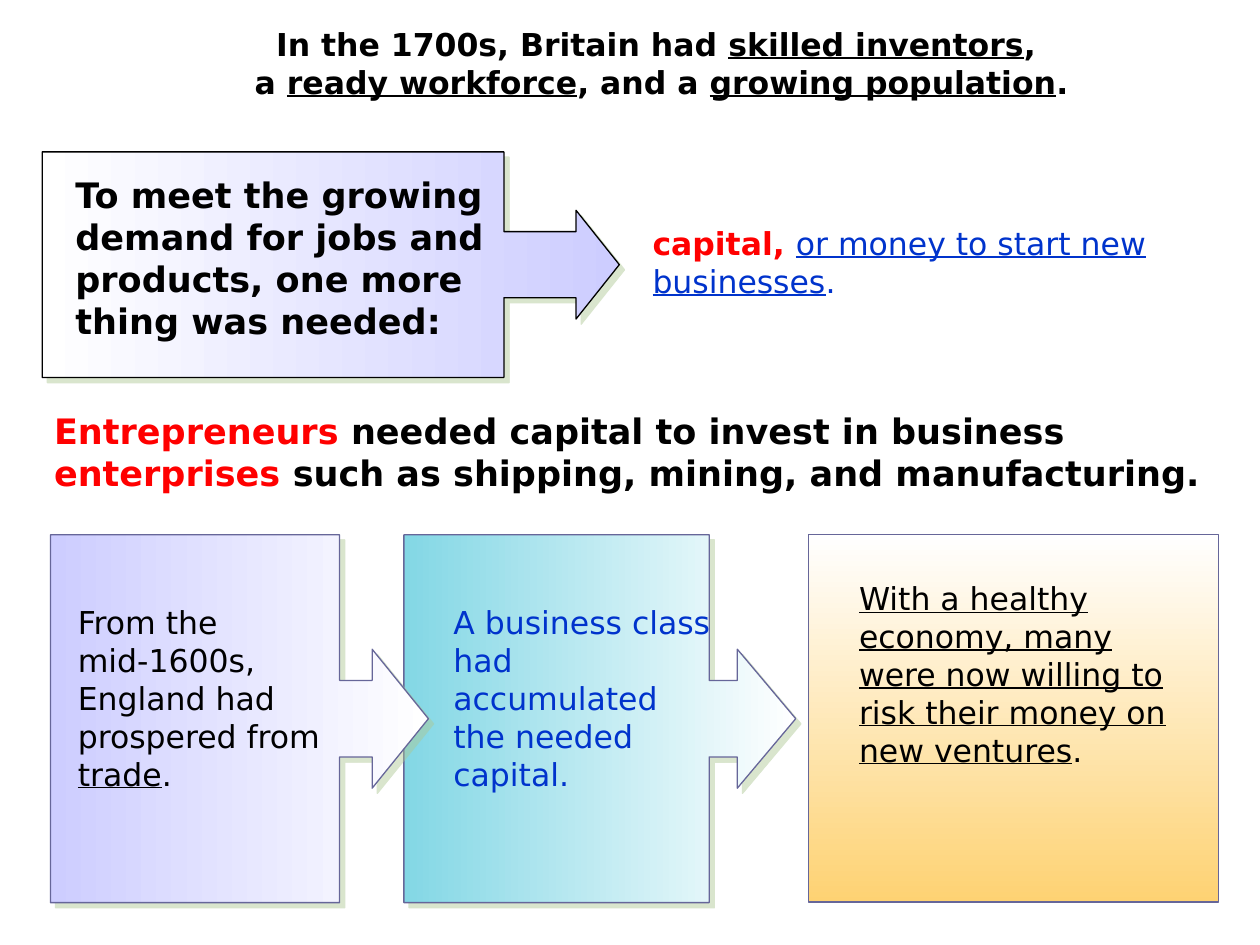
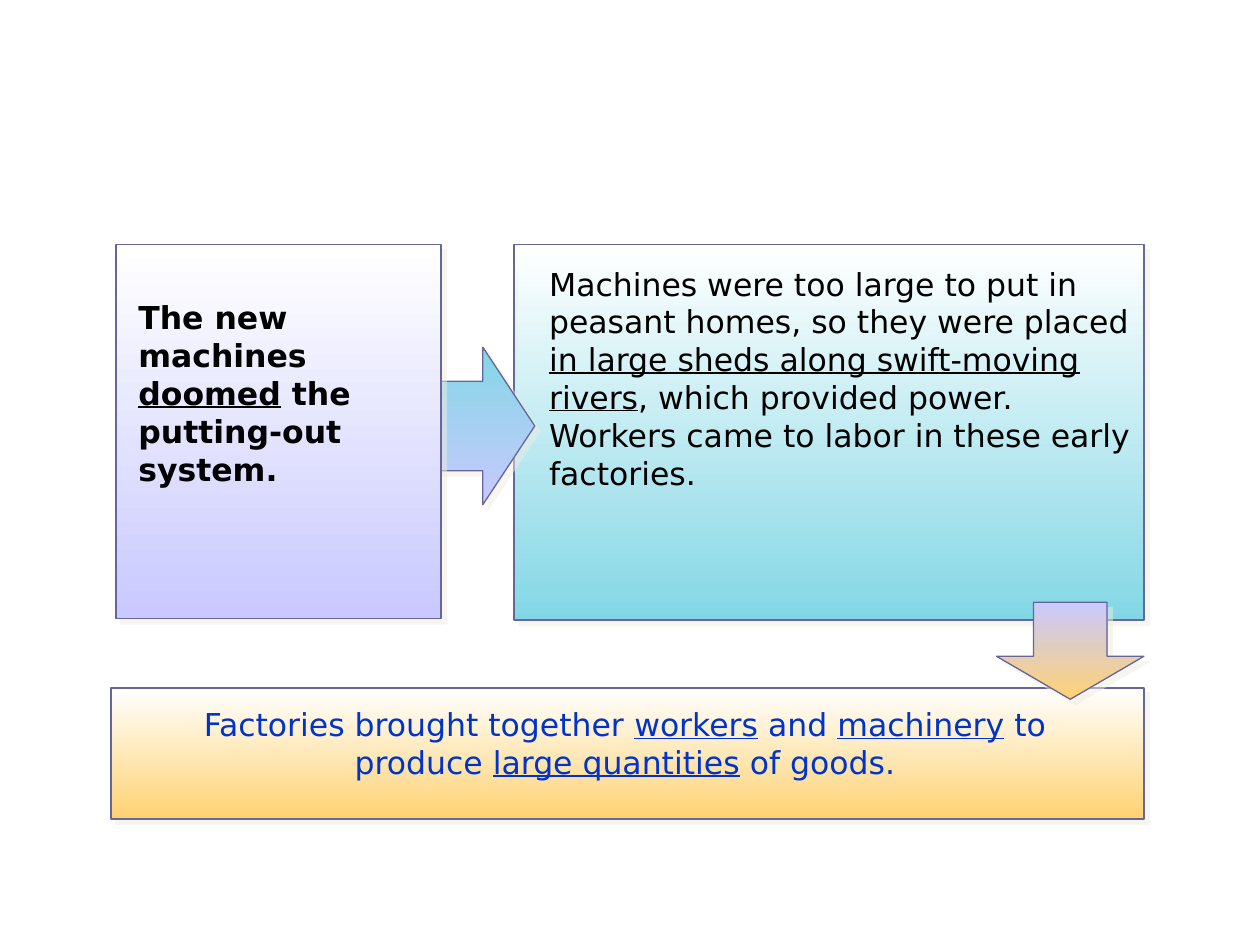
"""Build two slides on capital and the rise of factories."""
from lxml.etree import SubElement as Sub
from pptx import Presentation
from pptx.dml.color import RGBColor as Rgb
from pptx.enum.shapes import MSO_SHAPE as Kind
from pptx.enum.text import MSO_ANCHOR as Anchor, MSO_AUTO_SIZE as Auto, PP_ALIGN as Align
from pptx.oxml.ns import qn
from pptx.util import Pt


class Theme:
    font = "DejaVu Sans"
    body, lead = Pt(18), Pt(20)
    black, red, blue = "000000", "FF0000", "0033CC"
    white, lilac, mauve, aqua, gold = "FFFFFF", "CDCDFF", "C9C9FF", "83D7E5", "FED273"
    slate = "666699"
    thin, firm = 0.75, 1
    sage, sand = ("ADC793", 46000), ("EEECE1", 50000)


def draw(slide, kind, box, stops, edge, width, shade=None, turn=0, angle=270, adjust=()):
    """Draw a gradient shape whose box is given as seen after its turn."""
    left, top, wide, high = box
    if turn:
        left, top = left + (wide - high) / 2, top + (high - wide) / 2
        wide, high = high, wide
    shape = slide.shapes.add_shape(kind, *map(Pt, (left, top, wide, high)))
    shape.rotation = turn
    for i, value in enumerate(adjust):
        shape.adjustments[i] = value
    shape.fill.gradient()
    shape.fill.gradient_angle = angle
    for stop, tint, spot in zip(shape.fill.gradient_stops, stops, (0, 1)):
        stop.color.rgb = Rgb.from_string(tint)
        stop.position = spot
    shape.line.color.rgb = Rgb.from_string(edge)
    shape.line.width = Pt(width)
    shape.shadow.inherit = False
    if shade:
        tint, alpha = shade
        effects = shape._element.spPr.find(qn("a:effectLst"))
        outer = Sub(effects, qn("a:outerShdw"), blurRad="0", dist=str(Pt(4.2)),
                    dir="2700000", algn="ctr", rotWithShape="0")
        Sub(Sub(outer, qn("a:srgbClr"), val=tint), qn("a:alpha"), val=str(alpha))


def write(shape, box, paras, align=Align.LEFT, **base):
    """Place a text shape and fill it with formatted runs."""
    shape.left, shape.top, shape.width, shape.height = map(Pt, box)
    frame = shape.text_frame
    for key, value in dict(word_wrap=True, auto_size=Auto.NONE, vertical_anchor=Anchor.TOP).items():
        setattr(frame, key, value)
    for i, runs in enumerate(paras):
        para = frame.add_paragraph() if i else frame.paragraphs[0]
        para.alignment = align
        for text, *extra in runs:
            run = para.add_run()
            run.text = text
            look = dict(name=Theme.font, size=Theme.body, bold=False, tint=Theme.black) | base
            for part in extra:
                look |= part
            run.font.color.rgb = Rgb.from_string(look.pop("tint"))
            for key, value in look.items():
                setattr(run.font, key, value)


deck = Presentation()
deck.slide_width, deck.slide_height = Pt(720), Pt(540)
under, red = dict(underline=True), dict(tint=Theme.red)

money = deck.slides.add_slide(deck.slide_layouts[5])
write(money.shapes.title, (54, 10.8, 648, 61.2), [
    [("In the 1700s, Britain had ",), ("skilled inventors", under), (", ",)],
    [("a ",), ("ready workforce", under), (", and a ",), ("growing population", under), (".",)],
], Align.CENTER, bold=True)

calls = [
    ((24.1, 86.8, 329.8, 128.9), (Theme.lilac, Theme.white), Theme.black, (0.293, 0.241, 0.192, 0.8)),
    ((230.8, 305.6, 223.9, 210.2), (Theme.white, Theme.aqua), Theme.slate, (0.208, 0.189, 0.159, 0.779)),
    ((28.8, 305.6, 216, 210.2), (Theme.white, Theme.lilac), Theme.slate, (0.208, 0.189, 0.153, 0.765)),
]
for box, stops, edge, adjust in calls:
    draw(money, Kind.UP_ARROW_CALLOUT, box, stops, edge, Theme.thin, Theme.sage, 90, adjust=adjust)
draw(money, Kind.RECTANGLE, (462.2, 305.3, 234, 210.2), (Theme.white, Theme.gold), Theme.slate, Theme.thin)

notes = [
    ((365.8, 124.6, 336.3, 60.5), [[
        ("capital, ", red, dict(bold=True)), ("or money to start new businesses", under), (".",)]],
     dict(tint=Theme.blue)),
    ((36, 95.8, 249.2, 104.4), [[
        ("To meet the growing demand for jobs and products, one more thing was needed:",)]],
     dict(size=Theme.lead, bold=True)),
    ((23.8, 230.4, 676, 55.4), [[
        ("Entrepreneurs", red), (" needed capital to invest in business ",),
        ("enterprises", red), (" such as shipping, mining, and manufacturing.",)]],
     dict(size=Theme.lead, bold=True)),
    ((252, 341.3, 167, 141), [
        [("A business class had accumulated",)], [("the needed capital.",)]],
     dict(tint=Theme.blue)),
    ((37.4, 341.3, 153.5, 140.4), [[
        ("From the mid-1600s, England had prospered from ",), ("trade", under), (".",)]], {}),
    ((483.8, 327.6, 207.4, 167.8), [[
        ("With a healthy economy, many were now willing to risk their money on new ventures", under),
        (".",)]], {}),
]
for box, paras, look in notes:
    write(money.shapes.add_textbox(0, 0, 0, 0), box, paras, **look)

plant = deck.slides.add_slide(deck.slide_layouts[6])
forms = [
    (Kind.RECTANGLE, (293.8, 139.7, 360, 214.6), (Theme.white, Theme.aqua), Theme.firm, {}),
    (Kind.RECTANGLE, (63.4, 393.1, 590.4, 74.9), (Theme.white, Theme.gold), Theme.firm, {}),
    (Kind.DOWN_ARROW, (569.5, 344.2, 84.2, 55.4), (Theme.mauve, Theme.gold), Theme.thin,
     dict(adjust=(0.5, 0.443))),
    (Kind.DOWN_ARROW, (233.6, 198.4, 72, 90), (Theme.mauve, Theme.aqua), Theme.thin,
     dict(turn=270, angle=0, adjust=(0.569, 0.412))),
    (Kind.RECTANGLE, (66.2, 139.7, 185.8, 213.8), (Theme.white, Theme.mauve), Theme.firm, {}),
]
for kind, box, stops, width, more in forms:
    draw(plant, kind, box, stops, Theme.slate, width, Theme.sand, **more)

notes = [
    ((306.7, 147.6, 347, 193.7), [[
        ("Machines were too large to put in peasant homes, so they were placed ",),
        ("in large sheds along swift-moving rivers", under),
        (", which provided power. Workers came to labor in these early factories.",)]], {}),
    ((73.4, 399.6, 567.4, 59.8), [[
        ("Factories brought together ",), ("workers", under), (" and ",), ("machinery", under),
        (" to produce ",), ("large quantities", under), (" of goods.",)]],
     dict(align=Align.CENTER, tint=Theme.blue)),
    ((72, 167, 180, 140.4), [[
        ("The new machines ",), ("doomed", under), (" the putting-out system.",)]],
     dict(bold=True)),
]
for box, paras, look in notes:
    write(plant.shapes.add_textbox(0, 0, 0, 0), box, paras, **look)

deck.save("out.pptx")
